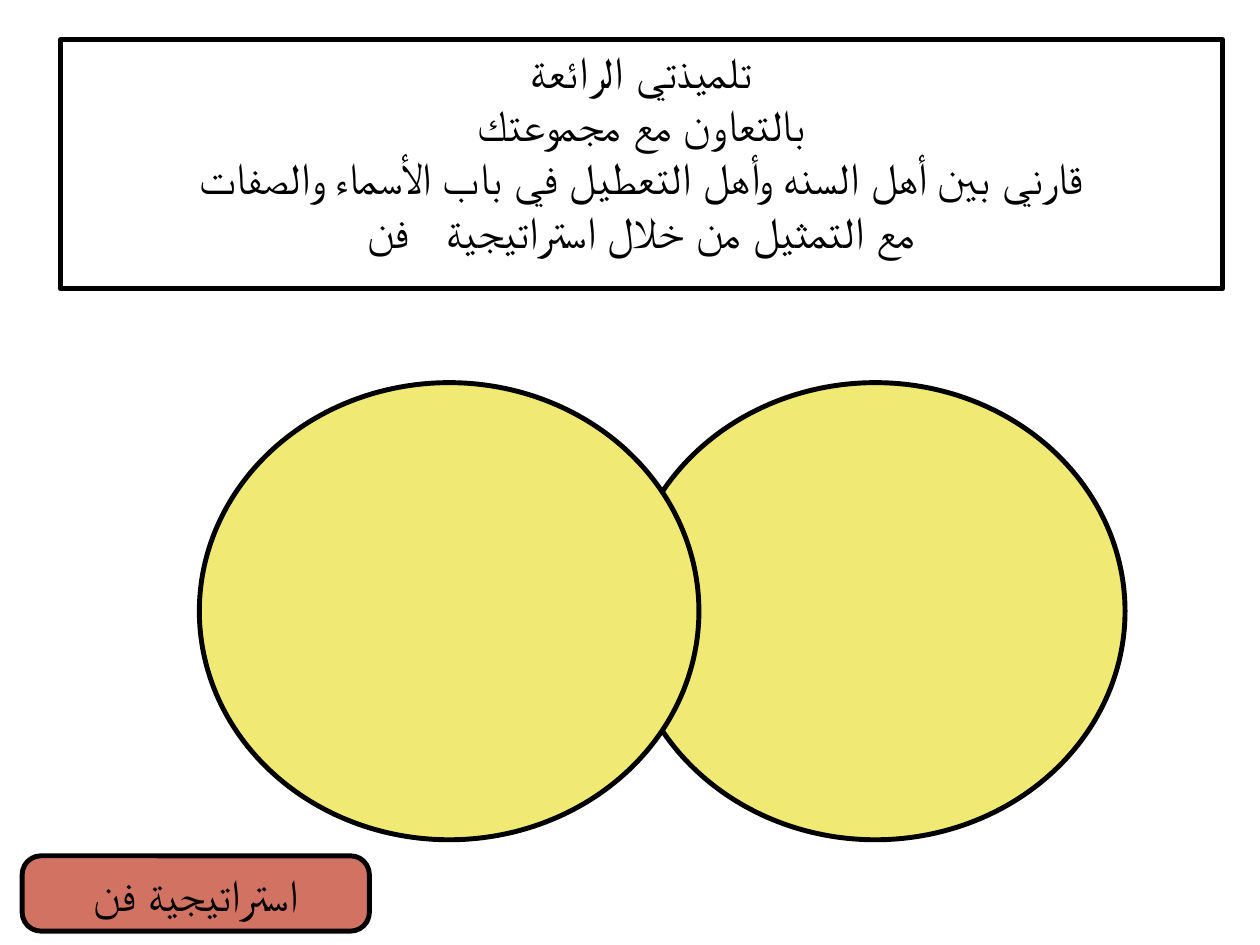
from lxml.etree import SubElement as Sub
from pptx import Presentation
from pptx.dml.color import RGBColor as Color
from pptx.enum.shapes import MSO_SHAPE as Kind
from pptx.enum.text import MSO_ANCHOR as Anchor, MSO_AUTO_SIZE as Auto, PP_ALIGN as Align
from pptx.oxml.ns import qn
from pptx.util import Pt

TASK = [
    "تلميذتي الرائعة",
    "بالتعاون مع مجموعتك",
    "قارني بين أهل السنه وأهل التعطيل في باب الأسماء والصفات",
    "مع التمثيل من خلال استراتيجية   فن",
]


def paint(shape, fill):
    """Give a shape its fill and the thick black outline."""
    shape.fill.solid()
    shape.fill.fore_color.rgb = Color.from_string(fill)
    shape.line.color.rgb = Color.from_string("000000")
    shape.line.width = Pt(4)


def write(shape, lines, anchor, inset):
    """Fill a shape with centred right-to-left lines."""
    frame = shape.text_frame
    frame.text = "\n".join(lines)
    frame.word_wrap = True
    frame.auto_size = Auto.NONE
    frame.vertical_anchor = anchor
    frame.margin_left = frame.margin_right = Pt(inset)
    frame.margin_top = frame.margin_bottom = Pt(inset)
    for para in frame.paragraphs:
        para.alignment = Align.CENTER
        para._p.get_or_add_pPr().set("rtl", "1")
        for run in para.runs:
            font = run.font
            font.size = Pt(36)
            font.name = "Arial"
            font.color.rgb = Color.from_string("000000")
            Sub(run._r.get_or_add_rPr(), qn("a:cs"), typeface="Arial")


def add_title(slide, lines, left, top, width, height):
    """Place the title as a framed box of lines."""
    title = slide.shapes.title
    title.left, title.top = Pt(left), Pt(top)
    title.width, title.height = Pt(width), Pt(height)
    paint(title, "FFFFFF")
    write(title, lines, Anchor.TOP, 3.6)


def add_form(slide, kind, fill, left, top, width, height):
    """Add a flat outlined shape."""
    shape = slide.shapes.add_shape(kind, Pt(left), Pt(top), Pt(width), Pt(height))
    shape.shadow.inherit = False
    paint(shape, fill)
    return shape


def add_label(slide, text, left, top, width, height):
    """Add a rounded label with its text."""
    label = add_form(slide, Kind.ROUNDED_RECTANGLE, "D27263", left, top, width, height)
    label.adjustments[0] = 0.25
    write(label, [text], Anchor.MIDDLE, 4.3)


def main():
    """Build and save the slide."""
    deck = Presentation()
    deck.slide_width, deck.slide_height = Pt(1024), Pt(768)
    slide = deck.slides.add_slide(deck.slide_layouts[5])
    add_title(slide, TASK, 49, 32.4, 944.6, 202.3)
    for left in (508.3, 162):
        add_form(slide, Kind.OVAL, "F0EA75", left, 311, 406, 371.5)
    add_label(slide, "استراتيجية فن", 18, 695.5, 282.2, 61.2)
    deck.save("out.pptx")


if __name__ == "__main__":
    main()
